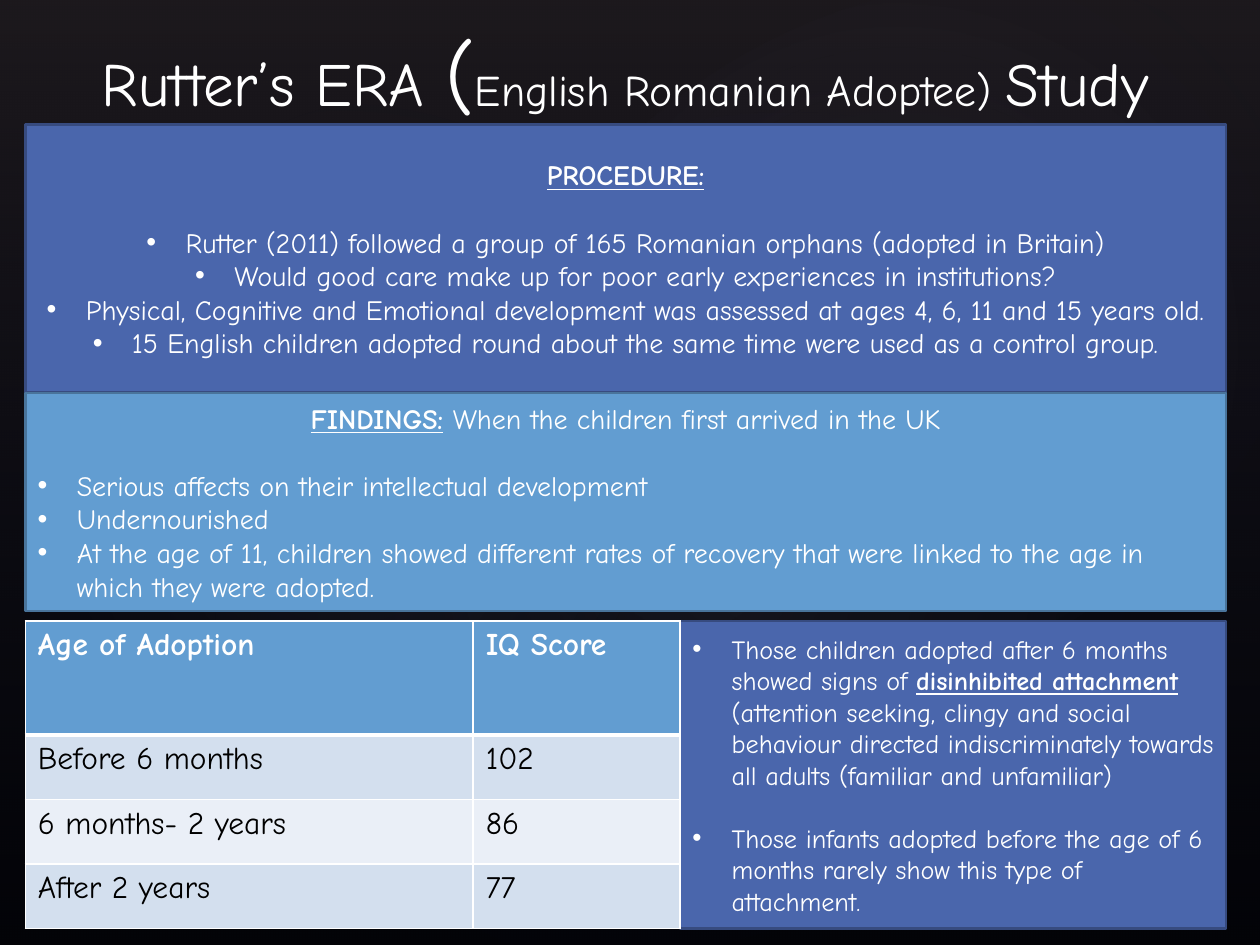
from lxml.etree import SubElement
from pptx import Presentation
from pptx.dml.color import RGBColor
from pptx.enum.shapes import MSO_SHAPE as Preset
from pptx.enum.text import MSO_ANCHOR as Anchor, PP_ALIGN as Align
from pptx.oxml import parse_xml
from pptx.oxml.ns import nsdecls, qn
from pptx.util import Cm, Pt

FONT = "Comic Neue"
COLORS = {
    "black": "000000", "white": "FFFFFF",
    "haze": "504652", "navy": "242852", "glow": "C4BCC6",
    "indigo": "4A66AC", "indigo_edge": "374B7F",
    "sky": "629DD1", "sky_edge": "49749B",
    "band_dark": "D3DFEE", "band_light": "EAEFF7",
}


def rgb(name):
    return RGBColor.from_string(COLORS[name])


def add_run(paragraph, text, size, color="white", strong=False, underline=False):
    run = paragraph.add_run()
    run.text = text
    font = run.font
    font.name, font.size = FONT, Pt(size)
    font.bold, font.underline = strong, underline
    font.color.rgb = rgb(color)


def add_bullet(paragraph):
    properties = paragraph._p.get_or_add_pPr()
    properties.set("marL", str(Cm(0.79)))
    properties.set("indent", str(-Cm(0.79)))
    SubElement(properties, qn("a:buFont")).set("typeface", "Arial")
    SubElement(properties, qn("a:buChar")).set("char", "•")


def add_gradient_shape(slide, preset, box, stops, direction, rotation=0):
    shape = slide.shapes.add_shape(preset, *map(Cm, box))
    shape.rotation = rotation
    shape.shadow.inherit = False
    shape.line.fill.background()
    shape.fill.background()
    stop_xml = "".join(
        f'<a:gs pos="{position * 1000}"><a:srgbClr val="{COLORS[color]}">'
        f'<a:alpha val="{alpha * 1000}"/></a:srgbClr></a:gs>'
        for position, color, alpha in stops)
    gradient = parse_xml(
        f'<a:gradFill {nsdecls("a")} rotWithShape="1">'
        f'<a:gsLst>{stop_xml}</a:gsLst>{direction}</a:gradFill>')
    properties = shape._element.spPr
    properties.replace(properties.find(qn("a:noFill")), gradient)


def add_backdrop(slide, box):
    slide.background.fill.solid()
    slide.background.fill.fore_color.rgb = rgb("black")
    add_gradient_shape(slide, Preset.RECTANGLE, box,
                       [(0, "haze", 36), (100, "navy", 10)],
                       '<a:lin ang="5400000" scaled="0"/>')
    left, top = box[:2]
    circle = ('<a:path path="circle"><a:fillToRect l="50000" t="50000" '
              'r="50000" b="50000"/></a:path>')
    glows = [(3.81, 2.9, 20.12, 15.85, 328.7, 7),
             (-0.76, 3.25, 15.39, 12.45, 294.3, 8),
             (9.09, 0.33, 18.01, 13.21, 328.7, 8)]
    for x, y, width, height, rotation, alpha in glows:
        add_gradient_shape(slide, Preset.OVAL, (left + x, top + y, width, height),
                           [(0, "glow", alpha), (58, "navy", 0)], circle, rotation)


def add_title(slide, box, runs):
    frame = slide.shapes.add_textbox(*map(Cm, box)).text_frame
    frame.word_wrap = True
    frame.vertical_anchor = Anchor.BOTTOM
    paragraph = frame.paragraphs[0]
    paragraph.alignment = Align.CENTER
    for text, size in runs:
        add_run(paragraph, text, size)


def add_panel(slide, box, color, size, bullets, heading=(), bullet_align=Align.LEFT):
    shape = slide.shapes.add_shape(Preset.RECTANGLE, *map(Cm, box))
    shape.shadow.inherit = False
    shape.fill.solid()
    shape.fill.fore_color.rgb = rgb(color)
    shape.line.color.rgb = rgb(f"{color}_edge")
    shape.line.width = Pt(1.5)
    frame = shape.text_frame
    frame.word_wrap = True
    frame.vertical_anchor = Anchor.MIDDLE
    paragraph = frame.paragraphs[0]
    if heading:
        paragraph.alignment = Align.CENTER
        for text, strong in heading:
            add_run(paragraph, text, size, strong=strong, underline=strong)
    for index, (gap, runs) in enumerate(bullets):
        if heading or index:
            paragraph = frame.add_paragraph()
        paragraph.alignment = bullet_align
        paragraph.space_before = Pt(gap)
        add_bullet(paragraph)
        for text, strong in runs:
            add_run(paragraph, text, size, strong=strong, underline=strong)


def add_borders(cell, widths):
    properties = cell._tc.get_or_add_tcPr()
    for side, width in widths.items():
        properties.append(parse_xml(
            f'<a:ln{side} {nsdecls("a")} w="{Pt(width)}"><a:solidFill>'
            f'<a:srgbClr val="{COLORS["white"]}"/></a:solidFill></a:ln{side}>'))


def add_score_table(slide, box, column_widths, row_heights, rows):
    table = slide.shapes.add_table(len(rows), len(rows[0]), *map(Cm, box)).table
    for column, width in zip(table.columns, column_widths):
        column.width = Cm(width)
    for index, (row, height, texts) in enumerate(zip(table.rows, row_heights, rows)):
        row.height = Cm(height)
        header = index == 0
        fill = "sky" if header else "band_dark" if index % 2 else "band_light"
        for cell, text in zip(row.cells, texts):
            add_borders(cell, {"L": 1, "R": 1, "T": 3 if index == 1 else 1,
                               "B": 3 if header else 1})
            cell.fill.solid()
            cell.fill.fore_color.rgb = rgb(fill)
            add_run(cell.text_frame.paragraphs[0], text, 18,
                    "white" if header else "black", strong=header)


def main():
    presentation = Presentation()
    presentation.slide_width, presentation.slide_height = Cm(25.4), Cm(19.05)
    slide = presentation.slides.add_slide(presentation.slide_layouts[6])
    left, width, lower_top, lower_height = 0.51, 24.21, 12.52, 6.2
    columns = [9.03, 4.17]
    table_width = sum(columns)

    add_backdrop(slide, (0, 0, 25.4, 19.05))
    add_title(slide, (0.3, 0.08, 24.61, 2.54), [
        ("Rutter’s ERA ", 35), ("(", 49),
        ("English Romanian Adoptee) ", 25), ("Study", 35)])

    procedure = [
        "Rutter (2011) followed a group of 165 Romanian orphans (adopted in Britain)",
        "Would good care make up for poor early experiences in institutions?",
        "Physical, Cognitive and Emotional development was assessed at ages 4, 6, 11 and 15 years old.",
        "15 English children adopted round about the same time were used as a control group.",
    ]
    findings = [
        "Serious affects on their intellectual development",
        "Undernourished",
        "At the age of 11, children showed different rates of recovery that were "
        "linked to the age in which they were adopted.",
    ]
    procedure_bullets, findings_bullets = (
        [(0 if index else 19.2, [(text, False)]) for index, text in enumerate(texts)]
        for texts in (procedure, findings))
    add_panel(slide, (left, 2.51, width, 5.41), "indigo", 16, procedure_bullets,
              [("PROCEDURE:", True)], Align.CENTER)
    add_panel(slide, (left, 7.92, width, 4.4), "sky", 16, findings_bullets,
              [("FINDINGS:", True), (" When the children first arrived in the UK", False)])
    add_panel(slide, (left + table_width, lower_top, width - table_width, lower_height),
              "indigo", 15, [
        (0, [("Those children adopted after 6 months showed signs of ", False),
             ("disinhibited attachment", True),
             (" (attention seeking, clingy and social behaviour directed "
              "indiscriminately towards all adults (familiar and unfamiliar)", False)]),
        (18, [("Those infants adopted before the age of 6 months rarely show "
               "this type of attachment.", False)])])
    add_score_table(slide, (left, lower_top, table_width, lower_height),
                    columns, [2.3, 1.3, 1.3, 1.3], [
        ("Age of Adoption", "IQ Score"), ("Before 6 months", "102"),
        ("6 months- 2 years", "86"), ("After 2 years", "77")])
    presentation.save("out.pptx")


if __name__ == "__main__":
    main()
